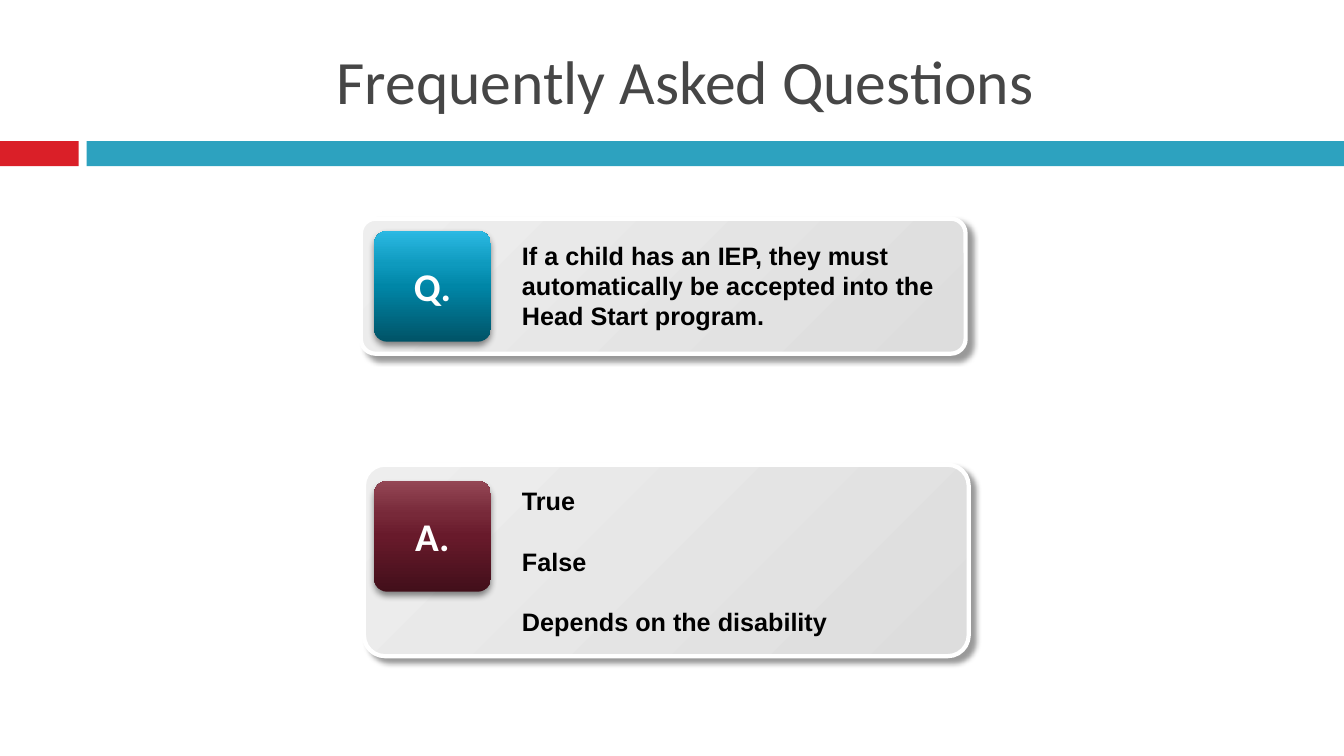
from lxml.etree import SubElement
from pptx import Presentation
from pptx.dml.color import RGBColor
from pptx.enum.shapes import MSO_SHAPE as Shape
from pptx.enum.text import MSO_ANCHOR as Anchor, MSO_AUTO_SIZE as AutoSize, PP_ALIGN as Align
from pptx.oxml.ns import qn
from pptx.util import Inches, Pt

COLORS = {"red": "DA1F28", "teal": "2DA2BF", "title": "464646",
          "white": "FFFFFF", "black": "000000"}

# Gradient stops: position in percent, colour
CARD_STOPS = [(0, "EEEEEE"), (100, "DDDDDD")]
QUESTION_STOPS = [(0, "005367"), (50, "0086A7"), (70, "0E9ABE"), (100, "2CB9E3")]
ANSWER_STOPS = [(0, "420F1A"), (50, "681A2B"), (70, "772939"), (100, "944755")]

WIDTH, HEIGHT = Inches(13.333), Inches(7.5)
BADGE_LEFT, TEXT_LEFT = 27.83, 38.1


def place(left, top, width, height):
    """Turn percentages of the slide's size into lengths."""
    return (round(WIDTH * left / 100), round(HEIGHT * top / 100),
            round(WIDTH * width / 100), round(HEIGHT * height / 100))


def color(name):
    return RGBColor.from_string(COLORS[name])


def style(para, font, size, color_name, bold=False, align=Align.LEFT):
    para.alignment = align
    para.font.name, para.font.size, para.font.bold = font, Pt(size), bold
    para.font.color.rgb = color(color_name)


def set_gradient(shape, stops, angle):
    shape.fill.gradient()
    gradient = shape.fill._xPr.find(qn("a:gradFill"))
    for child in list(gradient):
        gradient.remove(child)
    stop_list = SubElement(gradient, qn("a:gsLst"))
    for position, value in stops:
        stop = SubElement(stop_list, qn("a:gs"), pos=str(position * 1000))
        SubElement(stop, qn("a:srgbClr"), val=value)
    SubElement(gradient, qn("a:lin"), ang=str(angle * 60000), scaled="0")


def set_shadow(shape, opacity, blur, distance, angle):
    shape.shadow.inherit = False
    effects = shape._element.spPr.find(qn("a:effectLst"))
    outer = SubElement(effects, qn("a:outerShdw"), blurRad=str(Pt(blur)),
                       dist=str(Pt(distance)), dir=str(angle * 60000),
                       algn="ctr", rotWithShape="0")
    tint = SubElement(outer, qn("a:srgbClr"), val=COLORS["black"])
    SubElement(tint, qn("a:alpha"), val=str(opacity * 1000))


def add_band(page, left, width, color_name):
    band = page.shapes.add_shape(Shape.RECTANGLE, *place(left, 18.67, width, 3.33))
    band.fill.solid()
    band.fill.fore_color.rgb = color(color_name)
    band.line.fill.background()
    band.shadow.inherit = False


def add_card(page, left, top, height):
    card = page.shapes.add_shape(Shape.ROUNDED_RECTANGLE, *place(left, top, 45, height))
    card.adjustments[0] = 0.11
    set_gradient(card, CARD_STOPS, 45)
    card.line.color.rgb = color("white")
    card.line.width = Pt(3)
    set_shadow(card, 40, 4, 5, 45)


def add_badge(page, top, letter, stops):
    badge = page.shapes.add_shape(Shape.ROUNDED_RECTANGLE,
                                  *place(BADGE_LEFT, top, 8.7, 14.67))
    badge.adjustments[0] = 0.12
    set_gradient(badge, stops, 270)
    badge.line.fill.background()
    set_shadow(badge, 45, 5, 3, 90)
    frame = badge.text_frame
    frame.word_wrap = False
    frame.vertical_anchor = Anchor.MIDDLE
    frame.text = letter
    style(frame.paragraphs[0], "Calibri", 28, "white", True, Align.CENTER)


def add_text(page, top, height, lines):
    box = page.shapes.add_textbox(*place(TEXT_LEFT, top, 33, height))
    frame = box.text_frame
    frame.word_wrap = True
    frame.auto_size = AutoSize.SHAPE_TO_FIT_TEXT
    frame.text = "\n".join(lines)
    for index, para in enumerate(frame.paragraphs):
        style(para, "Arial", 18, "black", bold=True)
        para.space_before = Pt(21.6 if index else 0)


def set_title(page, words):
    title = page.shapes.title
    title.left, title.top, title.width, title.height = place(17.55, 3.33, 66.9, 14.4)
    title.text_frame.text = words
    title.text_frame.vertical_anchor = Anchor.MIDDLE
    style(title.text_frame.paragraphs[0], "Calibri", 44, "title", align=Align.CENTER)


def main():
    deck = Presentation()
    deck.slide_width, deck.slide_height = WIDTH, HEIGHT
    page = deck.slides.add_slide(deck.slide_layouts[5])

    # Header
    add_band(page, 0, 5.85, "red")
    add_band(page, 6.45, 93.55, "teal")
    set_title(page, "Frequently Asked Questions")

    # Question
    add_card(page, 26.85, 28.93, 17.87)
    add_badge(page, 30.53, "Q.", QUESTION_STOPS)
    add_text(page, 31.07, 13.47, ["If a child has an IEP, they must automatically "
                                  "be accepted into the Head Start program."])

    # Answer choices
    add_card(page, 27.08, 61.47, 25.33)
    add_badge(page, 63.6, "A.", ANSWER_STOPS)
    add_text(page, 63.6, 21.6, ["True", "False", "Depends on the disability"])

    deck.save("out.pptx")


if __name__ == "__main__":
    main()
